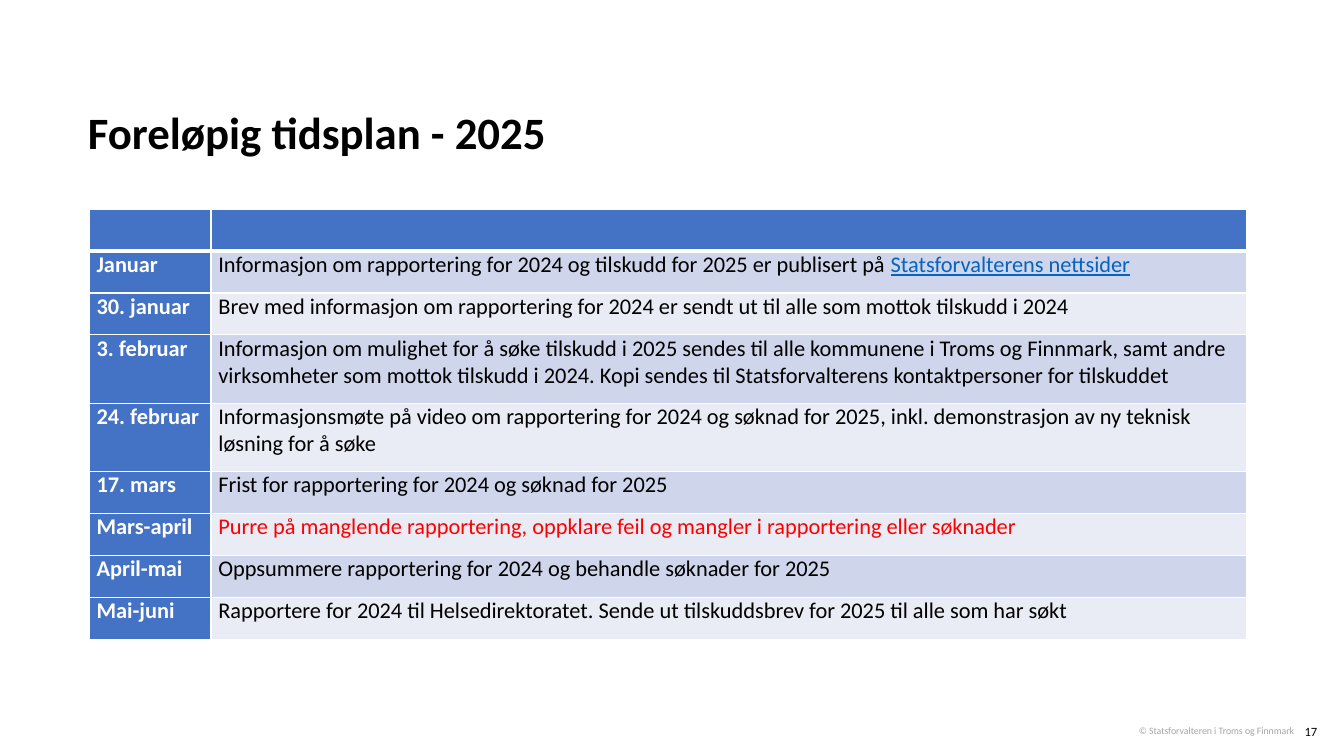
from pptx import Presentation
from pptx import util as u
from pptx.dml.color import RGBColor
from pptx.enum import text
from pptx.oxml import parse_xml
from pptx.oxml.ns import nsdecls

PX = 9525
THEME = {
    "face": "Calibri", "title": 32, "body": 16, "number": 9, "credit": 7,
    "black": "000000", "white": "FFFFFF", "grey": "A5A5A5", "red": "FF0000",
    "link": "0563C1", "head": "4472C4", "bands": ("CFD5EA", "E9EBF5"),
}


def write(para, words, size, color, **extra):
    """Add a styled run; extra holds further font attributes."""
    run = para.add_run()
    run.text = words
    run.font.color.rgb = RGBColor.from_string(THEME[color])
    style = {"name": THEME["face"], "size": u.Pt(THEME[size]), **extra}
    for key, value in style.items():
        setattr(run.font, key, value)


def edge(cell, side, width):
    cell._tc.get_or_add_tcPr().append(parse_xml(
        f'<a:ln{side} {nsdecls("a")} w="{u.Pt(width)}"><a:solidFill>'
        f'<a:srgbClr val="{THEME["white"]}"/></a:solidFill></a:ln{side}>'))


deck = Presentation()
deck.slide_width, deck.slide_height = 1280 * PX, 720 * PX
slide = deck.slides.add_slide(deck.slide_layouts[5])

# Title
title = slide.shapes.title
place = {"left": 74, "top": 21, "width": 1058, "height": 135}
for key, value in place.items():
    setattr(title, key, value * PX)
title.text_frame.vertical_anchor = text.MSO_ANCHOR.BOTTOM
para = title.text_frame.paragraphs[0]
para.alignment = text.PP_ALIGN.LEFT
para.line_spacing = 0.9
write(para, "Foreløpig tidsplan - 2025", "title", "black", bold=True)

# Schedule: date, row height, runs of text with their colours
LOW, TALL = 40, 65
plan = [
    ("", LOW, []),
    ("Januar", LOW, [
        ("Informasjon om rapportering for 2024 og tilskudd for 2025 er publisert på ", "black"),
        ("Statsforvalterens nettsider", "link")]),
    ("30. januar", LOW, [
        ("Brev med informasjon om rapportering for 2024 er sendt ut til alle "
         "som mottok tilskudd i 2024", "black")]),
    ("3. februar", TALL, [
        ("Informasjon om mulighet for å søke tilskudd i 2025 sendes til alle kommunene "
         "i Troms og Finnmark, samt andre virksomheter som mottok tilskudd i 2024. "
         "Kopi sendes til Statsforvalterens kontaktpersoner for tilskuddet", "black")]),
    ("24. februar", TALL, [
        ("Informasjonsmøte på video om rapportering for 2024 og søknad for 2025, "
         "inkl. demonstrasjon av ny teknisk løsning for å søke", "black")]),
    ("17. mars", LOW, [("Frist for rapportering for 2024 og søknad for 2025", "black")]),
    ("Mars-april", LOW, [
        ("Purre på manglende rapportering, oppklare feil og mangler i rapportering "
         "eller søknader", "red")]),
    ("April-mai", LOW, [
        ("Oppsummere rapportering for 2024 og behandle søknader for 2025", "black")]),
    ("Mai-juni", LOW, [
        ("Rapportere for 2024 til Helsedirektoratet. Sende ut tilskuddsbrev for 2025 "
         "til alle som har søkt", "black")]),
]
widths = (116, 986)
total = sum(high for _, high, _ in plan)
table = slide.shapes.add_table(
    len(plan), 2, 85 * PX, 199 * PX, sum(widths) * PX, total * PX).table
table.first_col = True
for col, width in zip(table.columns, widths):
    col.width = width * PX

inset = {"margin_left": 7 * PX, "margin_right": 7 * PX,
         "margin_top": 0, "margin_bottom": 0}
for i, (date, high, runs) in enumerate(plan):
    table.rows[i].height = high * PX
    band = THEME["bands"][(i - 1) % 2] if i else THEME["head"]
    for j, color in enumerate((THEME["head"], band)):
        cell = table.cell(i, j)
        for key, value in inset.items():
            setattr(cell, key, value)
        for side in "LRTB":
            thick = (i, side) in ((0, "B"), (1, "T"))
            edge(cell, side, 3 if thick else 1)
        cell.fill.solid()
        cell.fill.fore_color.rgb = RGBColor.from_string(color)
    if date:
        write(table.cell(i, 0).text_frame.paragraphs[0], date, "body", "white", bold=True)
    for words, color in runs:
        write(table.cell(i, 1).text_frame.paragraphs[0], words, "body", color,
              bold=False, underline=color == "link")

# Footer
footer = [
    ("17", "number", "black", (1212, 684, 52, 25)),
    ("© Statsforvalteren i Troms og Finnmark", "credit", "grey", (1042, 685, 200, 21)),
]
for words, size, color, spot in footer:
    frame = slide.shapes.add_textbox(*(n * PX for n in spot)).text_frame
    frame.word_wrap = True
    frame.vertical_anchor = text.MSO_ANCHOR.MIDDLE
    para = frame.paragraphs[0]
    para.alignment = text.PP_ALIGN.RIGHT
    write(para, words, size, color)

deck.save("out.pptx")
